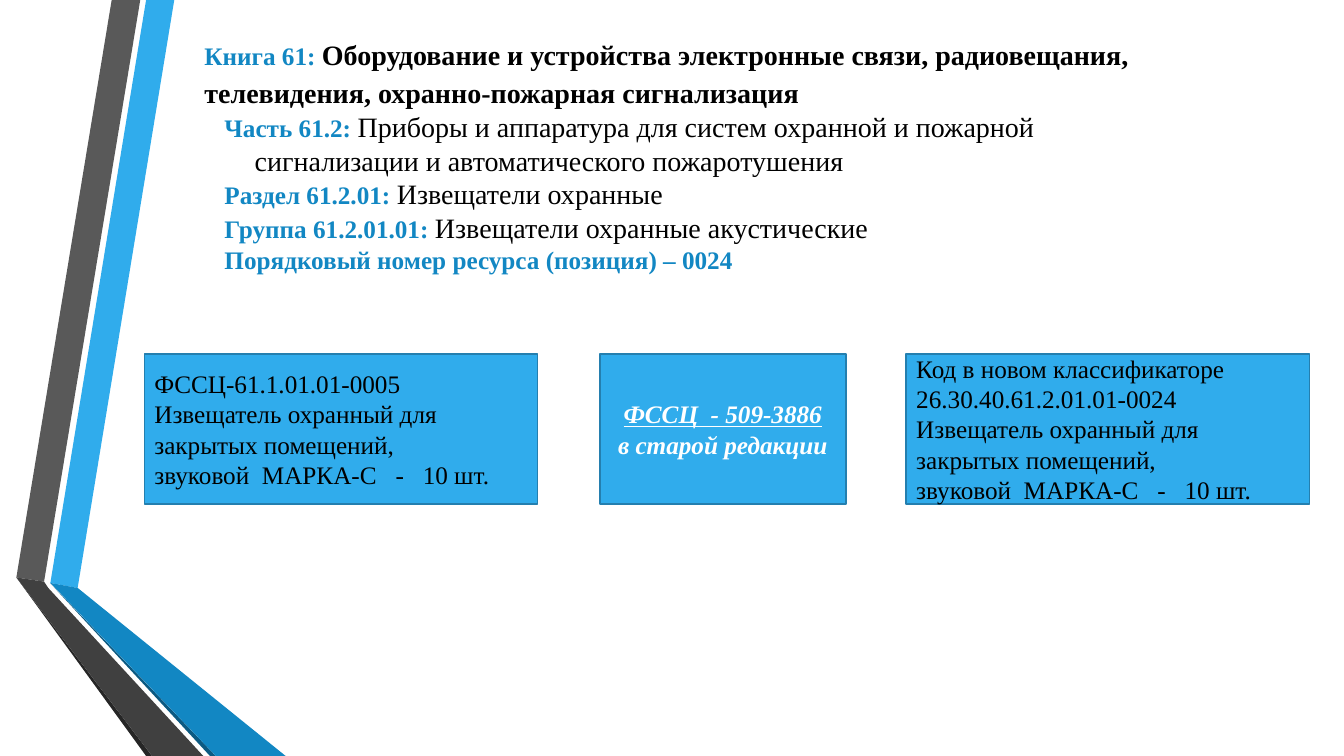
from dataclasses import dataclass

from pptx import Presentation
from pptx.dml.color import RGBColor as Rgb
from pptx.enum.shapes import MSO_SHAPE as Shape
from pptx.enum.text import MSO_ANCHOR as Anchor, PP_ALIGN as Align
from pptx.util import Inches, Pt

COLUMNS, ROWS = 160, 90
CELL = Inches(1) / 12


@dataclass(frozen=True)
class Theme:
    font: str = "Times New Roman"
    label_size: int = 18
    body_size: int = 20
    card_size: int = 18
    border_width: float = 1.25
    heading_spacing: float = 1.15
    black: str = "000000"
    white: str = "FFFFFF"
    accent: str = "30ACEC"
    accent_deep: str = "1287C3"
    accent_shadow: str = "0C5A82"
    border: str = "247FAF"
    gray: str = "595959"
    gray_deep: str = "404040"
    gray_shadow: str = "262626"


@dataclass(frozen=True)
class Box:
    left: float
    top: float
    width: float
    height: float

    def emu(self):
        return [cells(n) for n in (self.left, self.top, self.width, self.height)]


THEME = Theme()

RIBBONS = [
    (THEME.accent, [(6, 69.4), (9.25, 70), (20.75, 0), (17.4, 0)]),
    (THEME.gray, [(16.7, 0), (13.3, 0), (1.95, 68.75), (5.25, 69.25)]),
    (THEME.gray_shadow, [(1.95, 68.75), (17.4, 90), (18.1, 90)]),
    (THEME.accent_shadow, [(6, 69.45), (25, 90), (25.7, 90)]),
    (THEME.accent_deep, [(6, 69.4), (25.7, 90), (34, 90), (9.25, 70)]),
    (THEME.gray_deep, [(24.2, 90), (5.75, 70), (5.25, 69.25), (1.95, 68.75), (18.1, 90)]),
]

CLASSIFICATION = [
    ("Книга 61: ", "Оборудование и устройства электронные связи, радиовещания, "
                   "телевидения, охранно-пожарная сигнализация"),
    ("Часть 61.2: ", "Приборы и аппаратура для систем охранной и пожарной "
                     "сигнализации и автоматического пожаротушения"),
    ("Раздел 61.2.01: ", "Извещатели охранные"),
    ("Группа 61.2.01.01: ", "Извещатели охранные акустические"),
    ("Порядковый номер ресурса (позиция) – 0024", ""),
]

DETECTOR = ["Извещатель охранный для", "закрытых помещений,",
            "звуковой  МАРКА-С   -   10 шт."]
CARDS = [
    (0, 46.8, ["ФССЦ-61.1.01.01-0005", *DETECTOR], False),
    (54.2, 29.3, ["ФССЦ  - 509-3886", "в старой редакции"], True),
    (90.7, 48, ["Код в новом классификаторе", "26.30.40.61.2.01.01-0024", *DETECTOR], False),
]


def cells(count):
    return round(count * CELL)


def add_run(paragraph, text, size, color, bold=False, italic=False, underline=False):
    run = paragraph.add_run()
    run.text = text
    font = run.font
    font.name, font.size = THEME.font, Pt(size)
    font.bold, font.italic, font.underline = bold, italic, underline
    font.color.rgb = Rgb.from_string(color)


def next_paragraph(frame, index):
    return frame.add_paragraph() if index else frame.paragraphs[0]


def fill_shape(shape, color):
    shape.shadow.inherit = False
    shape.fill.solid()
    shape.fill.fore_color.rgb = Rgb.from_string(color)


def add_ribbons(slide, box):
    for color, outline in RIBBONS:
        points = [(cells(box.left + x), cells(box.top + y)) for x, y in outline]
        builder = slide.shapes.build_freeform(*points[0])
        builder.add_line_segments(points[1:], close=True)
        ribbon = builder.convert_to_shape()
        fill_shape(ribbon, color)
        ribbon.line.fill.background()


def add_classification(slide, box):
    frame = slide.shapes.add_textbox(*box.emu()).text_frame
    frame.word_wrap = True
    for index, (label, description) in enumerate(CLASSIFICATION):
        is_heading = index == 0
        paragraph = next_paragraph(frame, index)
        if is_heading:
            paragraph.line_spacing = THEME.heading_spacing
        else:
            properties = paragraph._p.get_or_add_pPr()
            properties.set("marL", str(Inches(0.5)))
            properties.set("indent", str(Inches(-0.3)))
        add_run(paragraph, label, THEME.label_size, THEME.accent_deep, bold=True)
        if description:
            add_run(paragraph, description, THEME.body_size, THEME.black, bold=is_heading)


def add_card(slide, box, lines, emphasized):
    card = slide.shapes.add_shape(Shape.RECTANGLE, *box.emu())
    fill_shape(card, THEME.accent)
    card.line.color.rgb = Rgb.from_string(THEME.border)
    card.line.width = Pt(THEME.border_width)
    frame = card.text_frame
    frame.word_wrap = True
    frame.vertical_anchor = Anchor.MIDDLE
    color = THEME.white if emphasized else THEME.black
    for index, line in enumerate(lines):
        paragraph = next_paragraph(frame, index)
        paragraph.alignment = Align.CENTER if emphasized else Align.LEFT
        add_run(paragraph, line, THEME.card_size, color, bold=emphasized,
                italic=emphasized, underline=emphasized and index == 0)


def add_cards(slide, box):
    for offset, width, lines, emphasized in CARDS:
        add_card(slide, Box(box.left + offset, box.top, width, box.height), lines, emphasized)


def main():
    presentation = Presentation()
    presentation.slide_width = cells(COLUMNS)
    presentation.slide_height = cells(ROWS)
    slide = presentation.slides.add_slide(presentation.slide_layouts[6])
    add_ribbons(slide, Box(0, 0, 34, ROWS))
    add_classification(slide, Box(23.15, 3.25, 114.35, 30.25))
    add_cards(slide, Box(17.2, 42.1, 138.7, 17.9))
    presentation.save("out.pptx")


if __name__ == "__main__":
    main()
